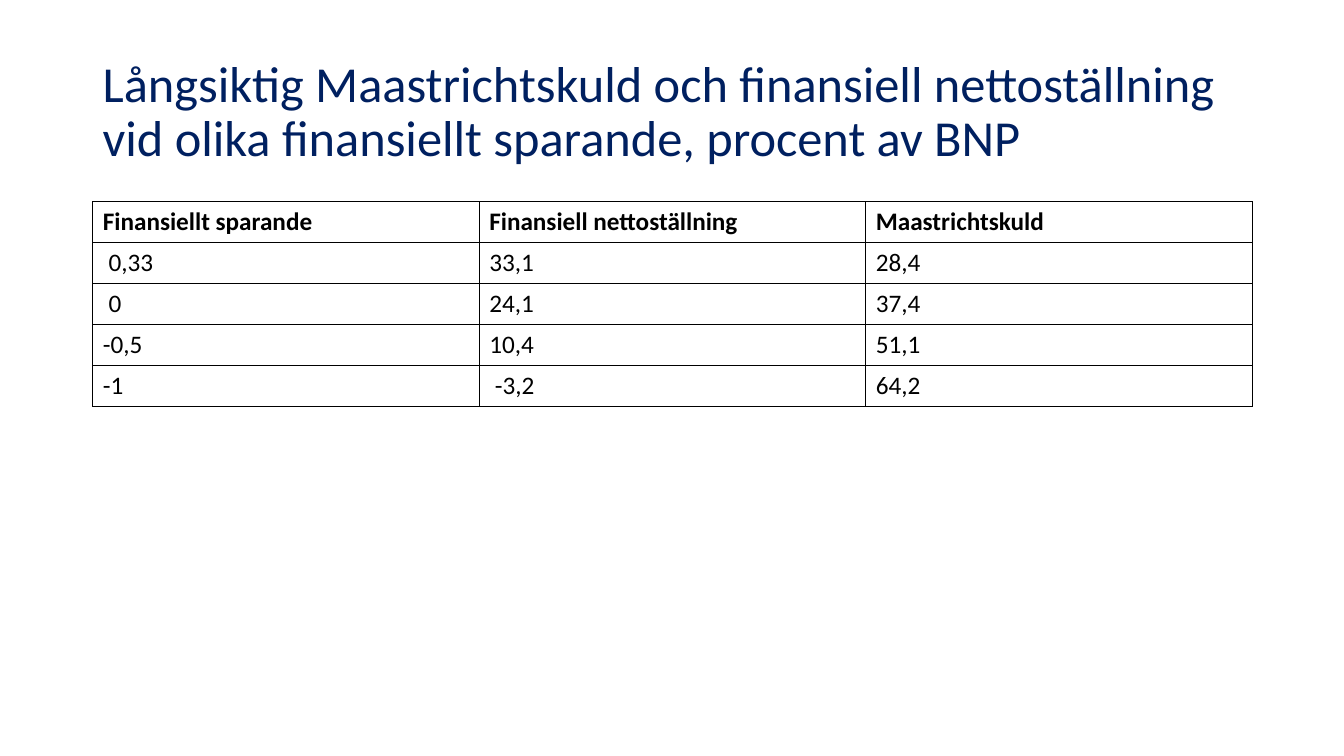
import pptx
import pptx.dml.color
import pptx.enum.text
import pptx.oxml.ns
import pptx.util
from lxml import etree

Inches = pptx.util.Inches
Pt = pptx.util.Pt

TITLE = ("Långsiktig Maastrichtskuld och finansiell nettoställning "
         "vid olika finansiellt sparande, procent av BNP")
DEBT_ROWS = [
    ["Finansiellt sparande", "Finansiell nettoställning", "Maastrichtskuld"],
    [" 0,33", "33,1", "28,4"],
    [" 0", "24,1", "37,4"],
    ["-0,5", "10,4", "51,1"],
    ["-1", " -3,2", "64,2"],
]
TITLE_FORMAT = {"name": "Calibri", "size": Pt(36), "bold": False}
CELL_FORMAT = {"name": "Calibri", "size": Pt(18), "bold": False}
HEADER_FORMAT = {**CELL_FORMAT, "bold": True}


def rgb(hex_color):
    return pptx.dml.color.RGBColor.from_string(hex_color)


def write_text(paragraph, text, font_format, color):
    run = paragraph.add_run()
    run.text = text
    for attribute, value in font_format.items():
        setattr(run.font, attribute, value)
    run.font.color.rgb = rgb(color)


def set_borders(cell, color, width):
    cell_properties = cell._tc.get_or_add_tcPr()
    qn = pptx.oxml.ns.qn
    for side in ("lnL", "lnR", "lnT", "lnB"):
        border = etree.SubElement(cell_properties, qn(f"a:{side}"), w=str(int(width)))
        fill = etree.SubElement(border, qn("a:solidFill"))
        etree.SubElement(fill, qn("a:srgbClr"), val=color)


def add_title(slide, left, top, width, height):
    title = slide.shapes.add_textbox(left, top, width, height).text_frame
    title.word_wrap = True
    title.vertical_anchor = pptx.enum.text.MSO_ANCHOR.MIDDLE
    heading = title.paragraphs[0]
    heading.line_spacing = 0.9
    write_text(heading, TITLE, TITLE_FORMAT, "002060")


def add_debt_table(slide, left, top, width, height):
    frame = slide.shapes.add_table(
        len(DEBT_ROWS), len(DEBT_ROWS[0]), left, top, width, height)
    debt_table = frame.table
    debt_table.horz_banding = False
    for row_index, row in enumerate(DEBT_ROWS):
        font_format = CELL_FORMAT if row_index else HEADER_FORMAT
        for column_index, text in enumerate(row):
            cell = debt_table.cell(row_index, column_index)
            set_borders(cell, "000000", Pt(1))
            cell.fill.background()
            write_text(cell.text_frame.paragraphs[0], text, font_format, "000000")


def main():
    presentation = pptx.Presentation()
    presentation.slide_width = Inches(13.33)
    presentation.slide_height = Inches(7.5)
    slide = presentation.slides.add_slide(presentation.slide_layouts[6])
    left, width = Inches(0.92), Inches(11.5)
    add_title(slide, left, Inches(0.4), width, Inches(1.45))
    add_debt_table(slide, left, Inches(2), width, Inches(2.03))
    presentation.save("out.pptx")


if __name__ == "__main__":
    main()
